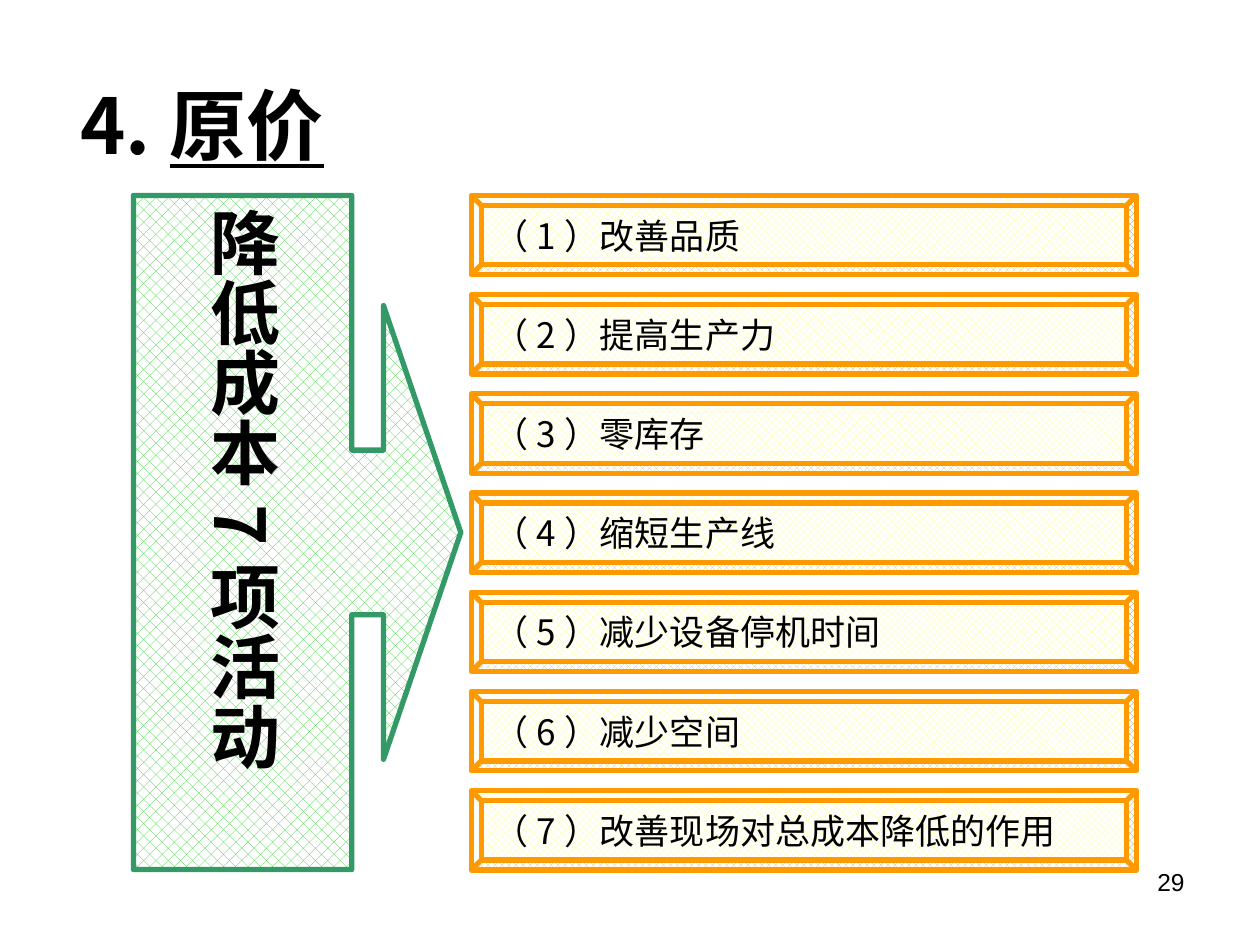
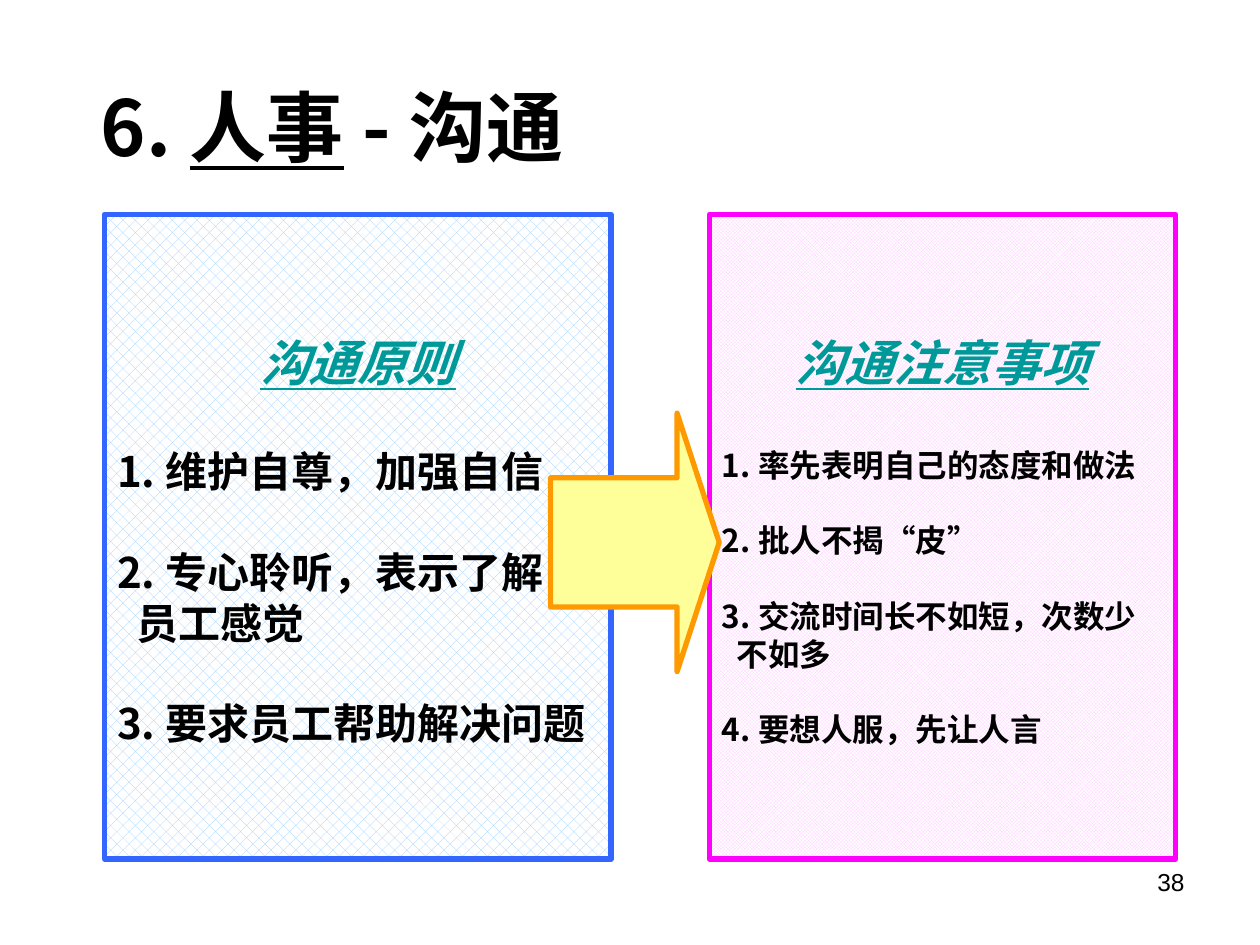
"""Two training slides: cost reduction activities and communication principles."""
from pptx import Presentation
from pptx.dml.color import RGBColor
from pptx.enum.dml import MSO_PATTERN as Pattern
from pptx.enum.shapes import MSO_SHAPE as Shape
from pptx.enum.text import MSO_ANCHOR as Anchor, MSO_AUTO_SIZE as AutoSize, PP_ALIGN as Align
from pptx.oxml.ns import qn
from pptx.util import Cm, Pt
from lxml.etree import SubElement

COLORS = {
    "text": "000000", "paper": "FFFFFF", "heading": "009999",
    "yellow": "FFFF99", "orange": "FF9900",
    "green": "33CC33", "dark_green": "339966",
    "sky": "99CCFF", "blue": "3366FF",
    "pink": "FFCCFF", "magenta": "FF00FF",
}
CJK_FONT = "Noto Sans CJK SC"
TITLE = {"size": Pt(44), "bold": True}
ACTIVITY = {"size": Pt(20)}
CALLOUT = {"size": Pt(40), "bold": True}
HEADING = {"size": Pt(28), "bold": True, "italic": True, "underline": True}
LINE_FACTOR = 1.2

ACTIVITIES = ["改善品质", "提高生产力", "零库存", "缩短生产线",
              "减少设备停机时间", "减少空间", "改善现场对总成本降低的作用"]
PRINCIPLES = ["维护自尊，加强自信", "专心聆听，表示了解\v员工感觉", "要求员工帮助解决问题"]
CAUTIONS = ["率先表明自己的态度和做法", "批人不揭“皮”",
            "交流时间长不如短，次数少\v不如多", "要想人服，先让人言"]


def rgb(name):
    """Return the named colour."""
    return RGBColor.from_string(COLORS[name])


def apply(target, values):
    """Set each attribute in values on target."""
    for attribute, value in values.items():
        setattr(target, attribute, value)


def style_run(run, style, color="text", typeface=CJK_FONT):
    """Give a run its style, colour and typeface for all scripts."""
    apply(run.font, {"name": typeface, **style})
    run.font.color.rgb = rgb(color)
    SubElement(run.font._element, qn("a:ea")).set("typeface", typeface)


def write(paragraph, words, style, layout=None, **run_options):
    """Put words into a paragraph with one style."""
    paragraph.text = words
    apply(paragraph, {"alignment": Align.LEFT, **(layout or {})})
    for run in paragraph.runs:
        style_run(run, style, **run_options)


def add_title(slide, box, parts):
    """Fill the title placeholder with (words, underlined) parts."""
    title = slide.shapes.title
    apply(title, dict(zip(("left", "top", "width", "height"), map(Cm, box))))
    frame = title.text_frame
    apply(frame, {"auto_size": AutoSize.NONE, "word_wrap": True,
                  "vertical_anchor": Anchor.MIDDLE})
    heading = frame.paragraphs[0]
    heading.alignment = Align.LEFT
    for words, underlined in parts:
        run = heading.add_run()
        run.text = words
        style_run(run, {**TITLE, "underline": underlined})


def add_page_number(slide, number):
    """Write the page number at the lower right."""
    frame = slide.shapes.add_textbox(*map(Cm, (18.21, 17.35, 5.92, 1.32))).text_frame
    frame.word_wrap = True
    write(frame.paragraphs[0], str(number), {"size": Pt(14)},
          {"alignment": Align.RIGHT}, typeface="Arial")


def add_block(slide, kind, box, fill, outline, pattern=None, adjustments=()):
    """Add an outlined shape with a plain or patterned fill."""
    block = slide.shapes.add_shape(kind, *map(Cm, box))
    block.shadow.inherit = False
    for index, value in enumerate(adjustments):
        block.adjustments[index] = value
    if pattern is None:
        block.fill.solid()
        block.fill.fore_color.rgb = rgb(fill)
    else:
        block.fill.patterned()
        block.fill.pattern = pattern
        block.fill.fore_color.rgb = rgb(fill)
        block.fill.back_color.rgb = rgb("paper")
    block.line.color.rgb = rgb(outline)
    block.line.width = Pt(3)
    apply(block.text_frame, {"word_wrap": True, "vertical_anchor": Anchor.MIDDLE})
    return block


def add_activity(slide, number, activity):
    """Add one numbered bevelled bar in the column of activities."""
    bar = add_block(slide, Shape.BEVEL, (9.5, 3.94 + 2 * (number - 1), 13.41, 1.6),
                    "yellow", "orange", Pattern.LARGE_CHECKER_BOARD, [0.125])
    write(bar.text_frame.paragraphs[0], f"（{number}）{activity}", ACTIVITY)


def add_callout(slide, words):
    """Add the vertical arrow callout that points at the activities."""
    callout = add_block(slide, Shape.RIGHT_ARROW_CALLOUT, (2.69, 3.94, 6.6, 13.59),
                        "green", "dark_green", Pattern.PERCENT_30,
                        [0.503, 0.693, 0.236, 0.667])
    callout.element.txBody.bodyPr.set("vert", "eaVert")
    write(callout.text_frame.paragraphs[0], words, CALLOUT, {"alignment": Align.CENTER})


def add_panel(slide, box, fill, outline, pattern, heading, items, size):
    """Add a panel with a heading and numbered points."""
    frame = add_block(slide, Shape.RECTANGLE, box, fill, outline, pattern).text_frame
    frame.margin_top = Cm(0.28)
    write(frame.paragraphs[0], heading, HEADING,
          {"alignment": Align.CENTER, "space_after": Pt(31),
           "line_spacing": Pt(HEADING["size"].pt * LINE_FACTOR)}, color="heading")
    pitch = Pt(size * LINE_FACTOR)
    hanging = int(Pt(size) * 0.47)
    for number, item in enumerate(items, 1):
        point = frame.add_paragraph()
        write(point, f"{number}.{item}", {"size": Pt(size), "bold": True},
              {"line_spacing": pitch, "space_before": pitch if number > 1 else Pt(0)})
        properties = point._p.get_or_add_pPr()
        properties.set("marL", str(hanging))
        properties.set("indent", str(-hanging))


def build_cost_slide(slide):
    """Build the slide on the seven cost reduction activities."""
    add_title(slide, (1.37, 0.91, 23.72, 3.18), [("4.", False), ("原价", True)])
    add_callout(slide, "降低成本7项活动")
    for number, activity in enumerate(ACTIVITIES, 1):
        add_activity(slide, number, activity)
    add_page_number(slide, 29)


def build_communication_slide(slide):
    """Build the slide on communication principles and cautions."""
    add_title(slide, (1.78, 0.94, 23.72, 3.18),
              [("6.", False), ("人事", True), ("-沟通", False)])
    add_panel(slide, (2.11, 4.32, 10.21, 13), "sky", "blue", Pattern.PERCENT_30,
              "沟通原则", PRINCIPLES, 24)
    add_panel(slide, (14.3, 4.32, 9.4, 13), "pink", "magenta",
              Pattern.SMALL_CHECKER_BOARD, "沟通注意事项", CAUTIONS, 18)
    add_block(slide, Shape.RIGHT_ARROW, (11.1, 8.33, 3.4, 5.21), "yellow", "orange",
              adjustments=[0.5, 0.25])
    add_page_number(slide, 38)


def main():
    """Create and save the presentation."""
    deck = Presentation()
    apply(deck, {"slide_width": Cm(25.4), "slide_height": Cm(19.05)})
    title_only = deck.slide_layouts[5]
    for build in (build_cost_slide, build_communication_slide):
        build(deck.slides.add_slide(title_only))
    deck.save("out.pptx")


if __name__ == "__main__":
    main()
